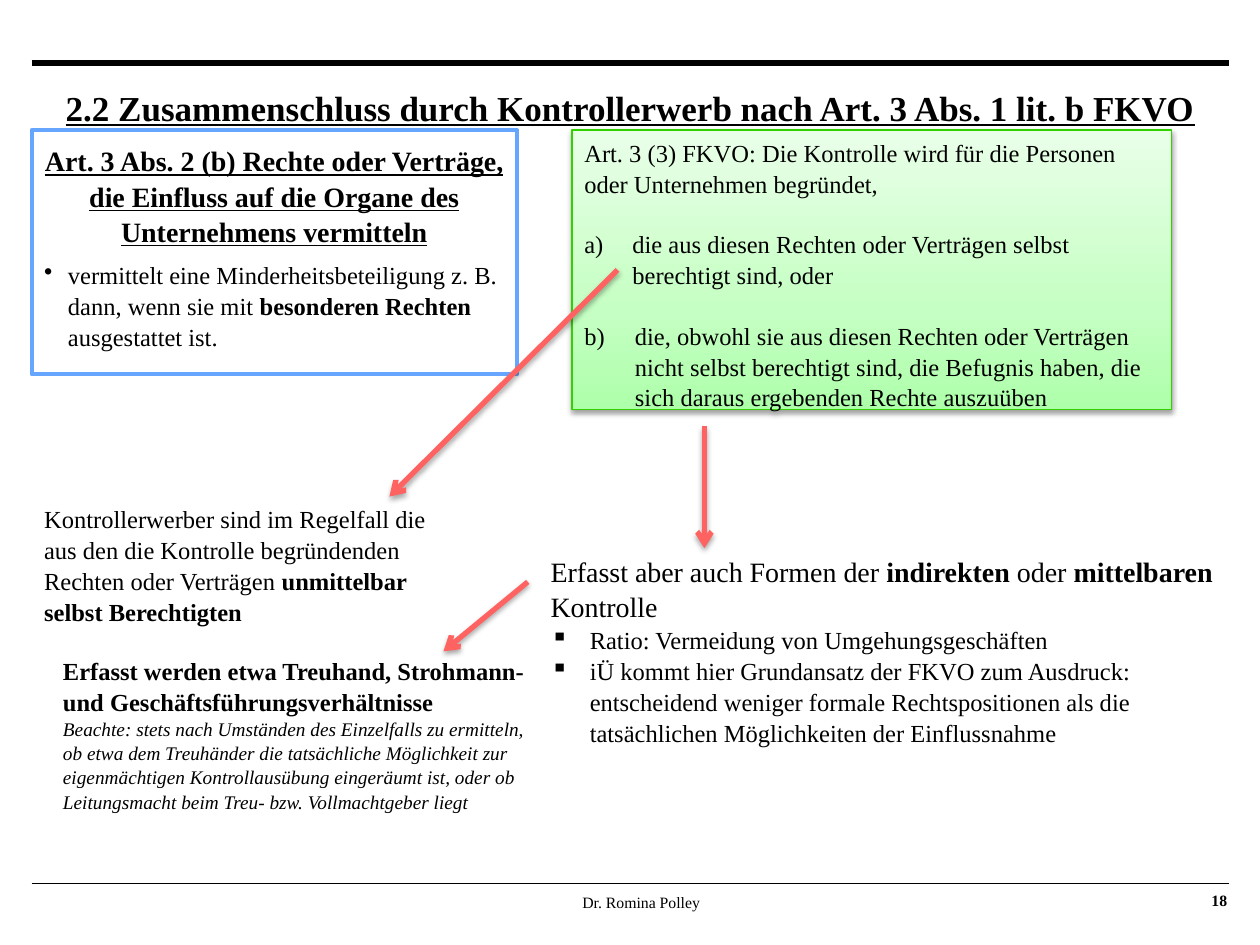
from collections import namedtuple
from copy import deepcopy
from dataclasses import dataclass

from pptx import Presentation
from pptx.dml.color import RGBColor
from pptx.enum import shapes, text
from pptx.oxml import parse_xml
from pptx.oxml.ns import nsdecls, qn
from pptx.util import Cm, Pt


@dataclass
class Theme:
    font: str = "Times New Roman"
    ink: str = "000000"
    blue: str = "66A6FF"
    green: str = "31D200"
    red: str = "FF6361"
    fade: tuple = ((0, "ADFFAA"), (0.35, "C5FFC3"), (1, "E9FFE8"))
    title: int = 20
    head: int = 16
    body: int = 14
    note: int = 11
    foot: int = 9
    pitch: float = 1.05


theme = Theme()
align = text.PP_ALIGN
# Runs are (text, style) pairs; style letters: b bold, i italic, u underlined
Para = namedtuple("Para", "runs size align before after hang mark",
                  defaults=(theme.body, align.LEFT, 0, 0, 0, None))


def write(frame, paras, inset=(0.25, 0.13, 0.25, 0.13), anchor=text.MSO_ANCHOR.TOP):
    """Fill a frame; inset is left, top, right, bottom in cm."""
    frame.word_wrap = True
    frame.vertical_anchor = anchor
    (frame.margin_left, frame.margin_top,
     frame.margin_right, frame.margin_bottom) = map(Cm, inset)
    for i, para in enumerate(paras):
        p = frame.add_paragraph() if i else frame.paragraphs[0]
        p.alignment = para.align
        p.line_spacing = theme.pitch
        p.space_before, p.space_after = Pt(para.before), Pt(para.after)
        props = p._p.get_or_add_pPr()
        if para.hang:
            props.set("marL", str(Cm(para.hang)))
            props.set("indent", str(-Cm(para.hang)))
        if para.mark:
            props.append(parse_xml(f"<a:{para.mark} {nsdecls('a')}/>"))
        for words, style in para.runs:
            r = p.add_run()
            r.text = words
            r.font.name, r.font.size = theme.font, Pt(para.size)
            r.font.color.rgb = RGBColor.from_string(theme.ink)
            r.font.bold = "b" in style
            r.font.italic = "i" in style
            r.font.underline = "u" in style


def shade(item, alpha, dist):
    """Give a soft drop shadow, or none when alpha is 0."""
    drop = (f'<a:outerShdw blurRad="{Pt(3.1)}" dist="{Pt(dist)}" dir="5400000" rotWithShape="0">'
            f'<a:srgbClr val="{theme.ink}"><a:alpha val="{alpha * 1000}"/></a:srgbClr>'
            "</a:outerShdw>") if alpha else ""
    item._element.spPr.append(
        parse_xml(f"<a:effectLst {nsdecls('a')}>{drop}</a:effectLst>"))


deck = Presentation()
deck.slide_width, deck.slide_height = Cm(25.4), Cm(19.05)
slide = deck.slides.add_slide(deck.slide_layouts[6])
tree = slide.shapes

# Rules above and below
for y, width in ((1.27, 3), (17.81, 0.75)):
    rule = tree.add_connector(shapes.MSO_CONNECTOR.STRAIGHT, Cm(0.64), Cm(y), Cm(24.77), Cm(y))
    rule.line.color.rgb = RGBColor.from_string(theme.ink)
    rule.line.width = Pt(width)
    shade(rule, 0, 0)

# Title and footer
title = tree.add_textbox(Cm(0.64), Cm(1.7), Cm(24.13), Cm(1.14))
write(title.text_frame, [
    Para([("2.2 Zusammenschluss durch Kontrollerwerb nach Art. 3 Abs. 1 lit. b FKVO", "bu")],
         theme.title, align.CENTER)], (0, 0, 0, 0))
foot = tree.add_textbox(Cm(4.01), Cm(17.98), Cm(17.83), Cm(0.51))
write(foot.text_frame, [Para([("Dr. Romina Polley", "")], theme.foot, align.CENTER)],
      (0.51, 0, 0.51, 0.13), text.MSO_ANCHOR.MIDDLE)
page = tree.add_textbox(Cm(23.06), Cm(17.81), Cm(1.68), Cm(0.66))
write(page.text_frame, [Para([("18", "b")], theme.foot, align.RIGHT)],
      (0, 0, 0, 0), text.MSO_ANCHOR.MIDDLE)

# Rights or contracts
rights = tree.add_textbox(Cm(0.64), Cm(2.62), Cm(9.78), Cm(4.93))
rights.line.color.rgb = RGBColor.from_string(theme.blue)
rights.line.width = Pt(2.25)
write(rights.text_frame, [
    Para([("Art. 3 Abs. 2 (b) Rechte oder Verträge, die Einfluss auf die Organe des "
           "Unternehmens vermitteln", "bu")], theme.head, align.CENTER, after=6),
    Para([("vermittelt eine Minderheitsbeteiligung z. B. dann, wenn sie mit ", ""),
          ("besonderen Rechten", "b"), (" ausgestattet ist.", "")],
         after=6, hang=0.48, mark='buChar char="•"'),
], (0.25, 0.25, 0.25, 0.25))

# Wording of the law
law = tree.add_shape(shapes.MSO_SHAPE.RECTANGLE, Cm(11.53), Cm(2.62), Cm(12.09), Cm(5.64))
law.fill.gradient()
law.fill.gradient_angle = 90
stops = law._element.spPr.find(qn("a:gradFill")).find(qn("a:gsLst"))
stops.insert(1, deepcopy(stops[0]))
for stop, (place, tone) in zip(law.fill.gradient_stops, theme.fade):
    stop.position = place
    stop.color.rgb = RGBColor.from_string(tone)
law.line.color.rgb = RGBColor.from_string(theme.green)
law.line.width = Pt(0.75)
shade(law, 38, 1.6)
write(law.text_frame, [
    Para([("Art. 3 (3) FKVO: Die Kontrolle wird für die Personen oder Unternehmen "
           "begründet,", "")]),
    Para([("die aus diesen Rechten oder Verträgen selbst berechtigt sind, oder", "")],
         before=17, hang=0.97, mark='buAutoNum type="alphaLcParenR"'),
    Para([("b)\tdie, obwohl sie aus diesen Rechten oder Verträgen nicht selbst berechtigt "
           "sind, die Befugnis haben, die sich daraus ergebenden Rechte auszuüben", "")],
         before=17, hang=1.02),
])

# Conclusions
square = 'buChar char="▪"'
notes = (
    ((0.64, 10.01, 8.79, 2.64), [
        Para([("Kontrollerwerber sind im Regelfall die aus den die Kontrolle begründenden "
               "Rechten oder Verträgen ", ""), ("unmittelbar selbst Berechtigten", "b")])]),
    ((10.85, 11.02, 14.86, 4.62), [
        Para([("Erfasst aber auch Formen der ", ""), ("indirekten", "b"), (" oder ", ""),
              ("mittelbaren", "b"), (" Kontrolle", "")], theme.head),
        Para([("Ratio: Vermeidung von Umgehungsgeschäften", "")], hang=0.79, mark=square),
        Para([("iÜ kommt hier Grundansatz der FKVO zum Ausdruck: entscheidend weniger formale "
               "Rechtspositionen als die tatsächlichen Möglichkeiten der Einflussnahme", "")],
             hang=0.79, mark=square)]),
    ((1.02, 13.06, 10.13, 3.94), [
        Para([("Erfasst werden etwa Treuhand, Strohmann- und "
               "Geschäftsführungsverhältnisse", "b")]),
        Para([("Beachte: stets nach Umständen des Einzelfalls zu ermitteln, ob etwa dem "
               "Treuhänder die tatsächliche Möglichkeit zur eigenmächtigen Kontrollausübung "
               "eingeräumt ist, oder ob Leitungsmacht beim Treu- bzw. Vollmachtgeber liegt",
               "i")], theme.note)]),
)
for area, paras in notes:
    note = tree.add_textbox(*map(Cm, area))
    write(note.text_frame, paras)

# Arrows from the law to its conclusions
for ends in ((12.45, 5.44, 7.85, 10.01), (14.2, 8.59, 14.2, 11.05), (10.64, 11.73, 8.94, 13.13)):
    arrow = tree.add_connector(shapes.MSO_CONNECTOR.STRAIGHT, *map(Cm, ends))
    arrow.line.color.rgb = RGBColor.from_string(theme.red)
    arrow.line.width = Pt(3)
    arrow.line._get_or_add_ln().append(parse_xml(f'<a:tailEnd {nsdecls("a")} type="arrow"/>'))
    shade(arrow, 35, 1.8)

deck.save("out.pptx")
